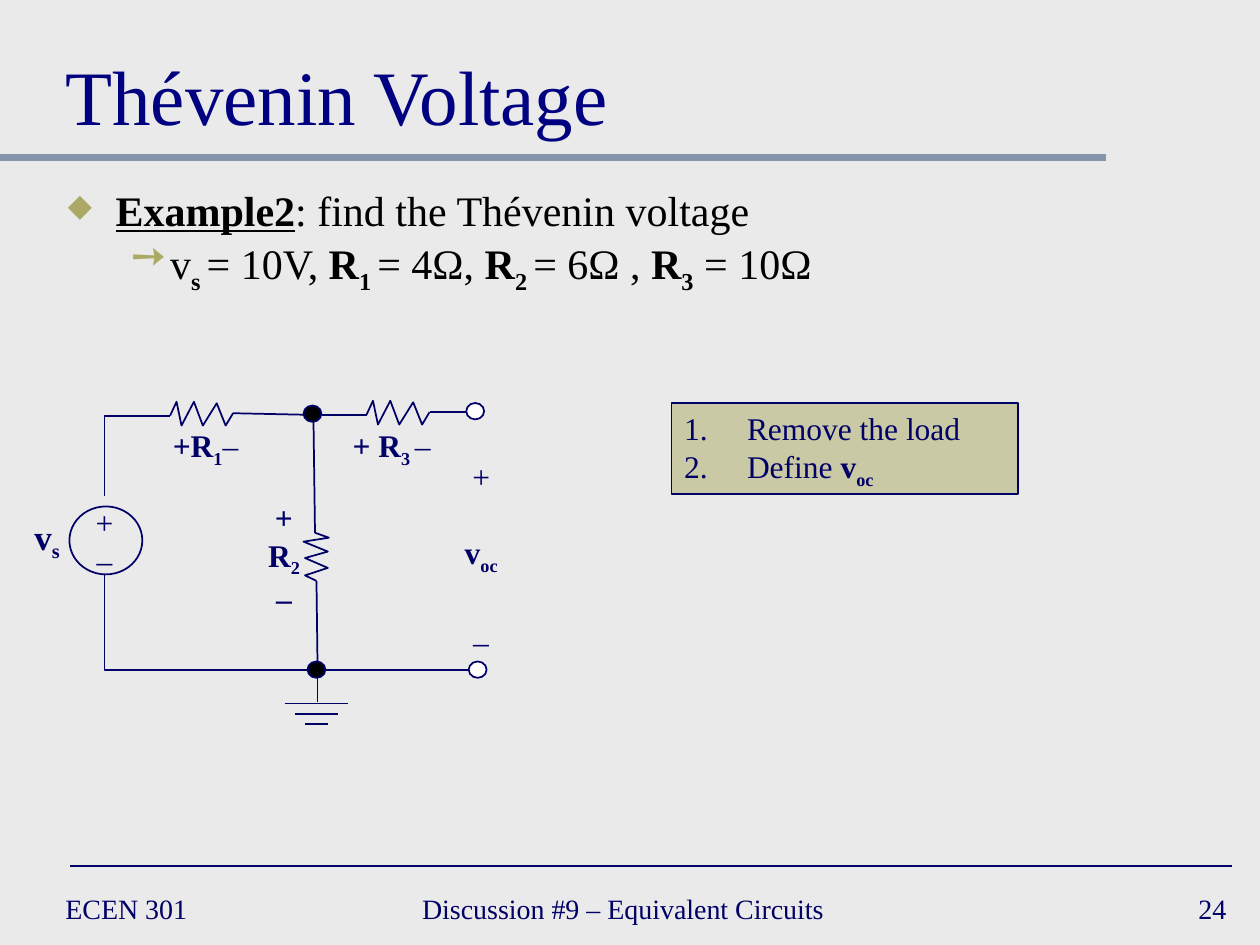
from lxml import etree
from pptx import Presentation
from pptx.dml.color import RGBColor
from pptx.enum.shapes import MSO_CONNECTOR, MSO_SHAPE
from pptx.enum.text import MSO_ANCHOR, PP_ALIGN
from pptx.oxml.ns import qn
from pptx.util import Cm, Pt

STRAIGHT = MSO_CONNECTOR.STRAIGHT
OVAL, RECTANGLE = MSO_SHAPE.OVAL, MSO_SHAPE.RECTANGLE
LEFT, CENTER, RIGHT = PP_ALIGN.LEFT, PP_ALIGN.CENTER, PP_ALIGN.RIGHT
TOP, MIDDLE, BOTTOM = MSO_ANCHOR.TOP, MSO_ANCHOR.MIDDLE, MSO_ANCHOR.BOTTOM

FONT = "Times New Roman"
COLORS = {
    "background": "EAEAEA", "rule": "8495A9", "ink": "000066", "title": "000080",
    "body": "000000", "node": "000000", "terminal": "FFFFFF", "accent": "ACA964",
}
ZIGZAG_ACROSS = [(0.13, -0.28), (0.23, 0.2), (0.48, -0.28), (0.66, 0.2),
                 (0.94, -0.25), (1.12, 0.2), (1.27, -0.05)]
ZIGZAG_DOWN = [(0.28, 0.1), (-0.23, 0.18), (0.26, 0.38), (-0.2, 0.51),
               (0.26, 0.71), (-0.2, 0.86), (0.03, 0.97)]


def rgb(name):
    return RGBColor.from_string(COLORS[name])


def set_paragraphs(frame, paragraphs, size, color="ink", align=LEFT):
    """Each paragraph is a list of (text, flags): b bold, u underlined, s subscript."""
    for number, pieces in enumerate(paragraphs):
        paragraph = frame.paragraphs[0] if number == 0 else frame.add_paragraph()
        paragraph.alignment = align
        for text, flags in pieces:
            run = paragraph.add_run()
            run.text = text
            font = run.font
            font.name, font.size = FONT, Pt(size)
            font.color.rgb = rgb(color)
            font.bold, font.underline = "b" in flags, "u" in flags
            if "s" in flags:
                font._element.set("baseline", "-25000")


def add_text(slide, box, paragraphs, size, color="ink", align=LEFT, anchor=TOP, wrap=True):
    frame = slide.shapes.add_textbox(*map(Cm, box)).text_frame
    frame.word_wrap = wrap
    frame.vertical_anchor = anchor
    set_paragraphs(frame, paragraphs, size, color, align)
    return frame


def add_label(slide, box, paragraphs, size=18):
    return add_text(slide, box, paragraphs, size, align=CENTER, wrap=False)


def add_bullet(paragraph, margin, hang, tag, attributes, percent=None):
    """Give a paragraph a hanging bullet; percent also sets the accent colour."""
    properties = paragraph._p.get_or_add_pPr()
    properties.set("marL", str(Cm(margin)))
    properties.set("indent", str(-Cm(hang)))
    if percent:
        tint = etree.SubElement(properties, qn("a:buClr"))
        etree.SubElement(tint, qn("a:srgbClr"), val=COLORS["accent"])
        etree.SubElement(properties, qn("a:buSzPct"), val=str(percent * 1000))
    etree.SubElement(properties, qn(tag), **attributes)


def add_line(slide, start, end, color="ink", width=1):
    line = slide.shapes.add_connector(STRAIGHT, *map(Cm, start + end))
    line.line.color.rgb = rgb(color)
    line.line.width = Pt(width)
    etree.SubElement(line._element.spPr, qn("a:effectLst"))


def add_path(slide, points):
    corners = [(Cm(x), Cm(y)) for x, y in points]
    builder = slide.shapes.build_freeform(*corners[0])
    builder.add_line_segments(corners[1:], close=False)
    outline(builder.convert_to_shape())


def add_resistor(slide, start, zigzag):
    x, y = start
    add_path(slide, [start] + [(x + dx, y + dy) for dx, dy in zigzag])


def outline(shape, fill=None):
    shape.shadow.inherit = False
    shape.line.color.rgb = rgb("ink")
    shape.line.width = Pt(1)
    if fill:
        shape.fill.solid()
        shape.fill.fore_color.rgb = rgb(fill)
    else:
        shape.fill.background()


def add_node(slide, center, fill):
    x, y = center
    width, height = 0.36, 0.33
    outline(slide.shapes.add_shape(
        OVAL, Cm(x - width / 2), Cm(y - height / 2), Cm(width), Cm(height)), fill)


def add_frame(slide):
    add_line(slide, (0, 3.17), (22.3, 3.17), "rule", 4)
    add_line(slide, (1.42, 17.46), (24.84, 17.46))
    for left, width, text, align in [
        (1.07, 5.51, "ECEN 301", LEFT),
        (8.26, 9.73, "Discussion #9 – Equivalent Circuits", LEFT),
        (19.69, 5.28, "24", RIGHT),
    ]:
        add_text(slide, (left, 17.78, width, 1.07), [[(text, "")]], 16,
                 align=align, anchor=MIDDLE)
    add_text(slide, (1.07, 0.43, 23.29, 2.54), [[("Thévenin Voltage", "")]], 44,
             "title", anchor=BOTTOM)


def add_problem(slide):
    frame = add_text(slide, (1.12, 3.79, 23.22, 2.44), [
        [("Example2", "bu"), (": find the Thévenin voltage", "")],
        [("v", ""), ("s ", "bs"), ("= 10V, ", ""), ("R", "b"), ("1 ", "bs"),
         ("= 4Ω, ", ""), ("R", "b"), ("2 ", "bs"), ("= 6Ω , ", ""),
         ("R", "b"), ("3", "bs"), (" = 10Ω", "")],
    ], 24, "body")
    task, values = frame.paragraphs
    task.line_spacing = values.line_spacing = 0.8
    values.level = 1
    values.space_before = Pt(4.8)
    add_bullet(task, 0.96, 0.96, "a:buChar", {"char": "◆"}, 75)
    add_bullet(values, 2.06, 0.79, "a:buChar", {"char": "➙"}, 100)


def add_steps(slide):
    steps = slide.shapes.add_shape(RECTANGLE, Cm(13.54), Cm(8.13), Cm(6.99), Cm(1.83))
    outline(steps, "accent")
    tint = steps._element.spPr.find(qn("a:solidFill"))[0]
    etree.SubElement(tint, qn("a:alpha"), val="50000")
    frame = steps.text_frame
    frame.word_wrap = True
    frame.vertical_anchor = TOP
    set_paragraphs(frame, [[("Remove the load", "")],
                           [("Define ", ""), ("v", "b"), ("oc", "bs")]], 18)
    for step in frame.paragraphs:
        add_bullet(step, 1.27, 1.27, "a:buAutoNum", {"type": "arabicPeriod"})


def add_circuit(slide):
    add_path(slide, [(6.2, 13.5), (2.11, 13.5), (2.11, 11.58)])
    add_path(slide, [(2.11, 10), (2.11, 8.38), (3.43, 8.38)])
    for start, end in [
        ((4.7, 8.33), (6.12, 8.36)), ((6.5, 8.36), (7.39, 8.36)),
        ((8.66, 8.31), (9.4, 8.31)), ((6.32, 8.51), (6.35, 10.74)),
        ((6.38, 11.71), (6.4, 13.34)), ((6.58, 13.5), (9.45, 13.5)),
        ((6.4, 13.51), (6.4, 14.15)),
    ]:
        add_line(slide, start, end)
    for step, half_width in enumerate((0.64, 0.43, 0.23)):
        y = 14.18 + 0.21 * step
        add_line(slide, (6.38 - half_width, y), (6.38 + half_width, y))

    add_resistor(slide, (3.43, 8.38), ZIGZAG_ACROSS)
    add_resistor(slide, (7.39, 8.36), ZIGZAG_ACROSS)
    add_resistor(slide, (6.35, 10.74), ZIGZAG_DOWN)
    outline(slide.shapes.add_shape(OVAL, Cm(1.4), Cm(10.21), Cm(1.47), Cm(1.37)))
    for center, fill in [((6.3, 8.34), "node"), ((6.38, 13.5), "node"),
                         ((9.58, 8.29), "terminal"), ((9.63, 13.5), "terminal")]:
        add_node(slide, center, fill)


def add_circuit_labels(slide):
    add_label(slide, (3.13, 8.46, 2.03, 1.02), [[("+R", "b"), ("1", "bs"), ("–", "")]])
    add_label(slide, (6.83, 8.46, 2.13, 1.02), [[("+ R", "b"), ("3 ", "bs"), ("–", "")]])
    add_label(slide, (5.13, 9.91, 1.19, 2.54),
              [[("+", "b")], [("R", "b"), ("2", "bs")], [("–", "b")]])
    add_label(slide, (0.43, 10.26, 1.04, 1.1), [[("v", "b"), ("s", "bs")]], 20)
    add_label(slide, (1.68, 10.01, 0.86, 1.78), [[("+", "")], [("–", "")]])
    open_circuit = add_label(slide, (9.09, 9.09, 1.22, 3.81),
                             [[("+", "")], [("v", "b"), ("oc", "bs")], [("–", "")]])
    open_circuit.paragraphs[1].space_before = Pt(22)
    open_circuit.paragraphs[2].space_before = Pt(26)


def main():
    deck = Presentation()
    deck.slide_width, deck.slide_height = Cm(25.4), Cm(19.05)
    slide = deck.slides.add_slide(deck.slide_layouts[6])
    slide.background.fill.solid()
    slide.background.fill.fore_color.rgb = rgb("background")
    add_frame(slide)
    add_problem(slide)
    add_circuit(slide)
    add_circuit_labels(slide)
    add_steps(slide)
    deck.save("out.pptx")


if __name__ == "__main__":
    main()
